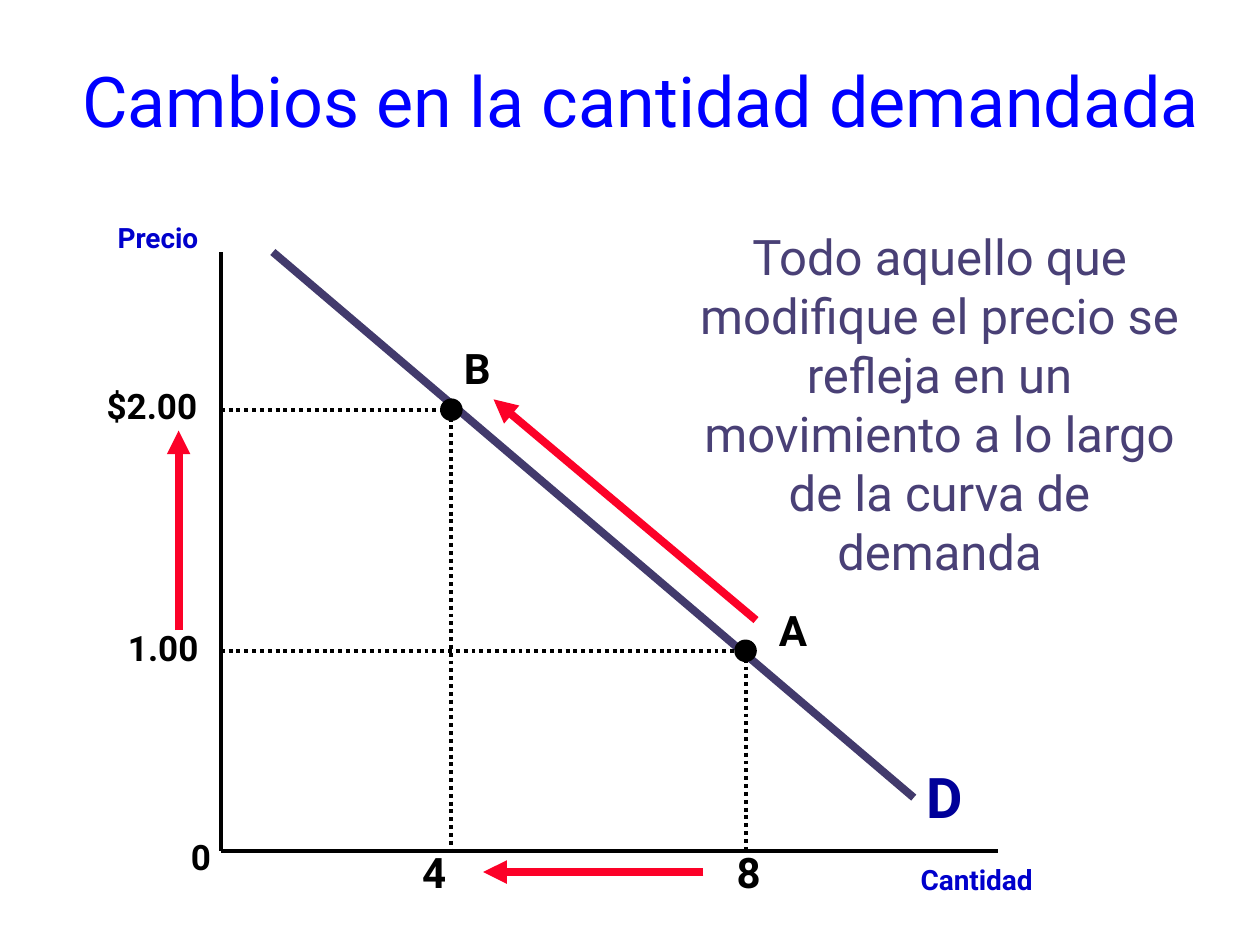
"""Build a slide on movement along a demand curve."""
from lxml import etree
from pptx import Presentation
from pptx.dml.color import RGBColor
from pptx.enum.dml import MSO_LINE
from pptx.enum.shapes import MSO_CONNECTOR, MSO_SHAPE
from pptx.enum.text import MSO_ANCHOR, MSO_AUTO_SIZE, PP_ALIGN
from pptx.oxml.ns import qn
from pptx.util import Cm, Pt

LINE = MSO_CONNECTOR.STRAIGHT
OVAL = MSO_SHAPE.OVAL
DOTS = MSO_LINE.ROUND_DOT
MID = MSO_ANCHOR.MIDDLE
TOP = MSO_ANCHOR.TOP
GROW = MSO_AUTO_SIZE.SHAPE_TO_FIT_TEXT
FIXED = MSO_AUTO_SIZE.NONE
LEFT, CENTER = PP_ALIGN.LEFT, PP_ALIGN.CENTER

FONT = "Roboto"
COLORS = {
    "black": "000000", "white": "FFFFFF", "title": "0000FF", "axis": "0000CC",
    "name": "000099", "curve": "423A6C", "note": "494076", "move": "FC0128",
}
LEFT_X, BASE_Y = 4.45, 17.15
POINTS = {"A": (15.03, 13.12), "B": (9.1, 8.26)}
DOT = 0.42
LABELS = [
    ("0", 3.6, 16.72, 2.1, 1.09, {}),
    ("1.00", 2.33, 12.5, 2.54, 1.09, {}),
    ("$2.00", 1.9, 7.62, 2.54, 1.09, {}),
    ("4", 8.26, 16.93, 1.9, 1.27, {"size": 24}),
    ("8", 14.6, 16.93, 1.9, 1.27, {"size": 24}),
    ("A", 15.45, 12.07, 0.85, 1.27, {"size": 24}),
    ("B", 9.1, 6.77, 1.48, 1.27, {"size": 24}),
    ("D", 18.42, 15.24, 2.12, 1.6, {"size": 32, "color": "name"}),
    ("Precio", 2.12, 4.32, 4.65, 0.93, {"size": 16, "color": "axis"}),
    ("Cantidad", 14.82, 17.27, 9.74, 0.93,
     {"size": 16, "color": "axis", "align": CENTER}),
]
MOVES = [
    ((15.24, 12.5), (9.95, 8.05)),
    ((3.6, 12.7), (3.6, 8.68)),
    ((14.18, 17.58), (9.74, 17.58)),
]


def tint(name):
    """Return the named colour."""
    return RGBColor.from_string(COLORS[name])


def place(shape, x, y, wide, high):
    """Set the place and size of a shape."""
    shape.left, shape.top = Cm(x), Cm(y)
    shape.width, shape.height = Cm(wide), Cm(high)


def write(shape, text, size=20, color="black", bold=True, align=LEFT,
          anchor=TOP, fit=GROW, space=1.0):
    """Put formatted text into a shape."""
    frame = shape.text_frame
    frame.word_wrap = True
    frame.auto_size = fit
    frame.vertical_anchor = anchor
    para = frame.paragraphs[0]
    para.alignment = align
    para.line_spacing = space
    run = para.add_run()
    run.text = text
    run.font.name = FONT
    run.font.size = Pt(size)
    run.font.bold = bold
    run.font.color.rgb = tint(color)


def label(slide, text, x, y, wide, high, **style):
    """Add a text box and return it."""
    box = slide.shapes.add_textbox(Cm(x), Cm(y), Cm(wide), Cm(high))
    write(box, text, **style)
    return box


def draw(slide, start, end, color="black", width=2.25, dash=None, head=False):
    """Draw a straight line, with an arrowhead on request."""
    ends = [Cm(value) for value in (*start, *end)]
    line = slide.shapes.add_connector(LINE, *ends)
    line.line.color.rgb = tint(color)
    line.line.width = Pt(width)
    if dash:
        line.line.dash_style = dash
    if head:
        etree.SubElement(line.line._get_or_add_ln(), qn("a:tailEnd"),
                         type="triangle")
    etree.SubElement(line._element.spPr, qn("a:effectLst"))


def mark(slide, x, y):
    """Draw a round dot centred on a point."""
    dot = slide.shapes.add_shape(OVAL, Cm(x - DOT / 2), Cm(y - DOT / 2),
                                 Cm(DOT), Cm(DOT))
    dot.shadow.inherit = False
    dot.fill.solid()
    dot.fill.fore_color.rgb = tint("black")
    dot.line.color.rgb = tint("black")
    dot.line.width = Pt(1)


def main():
    """Build and save the slide."""
    deck = Presentation()
    deck.slide_width, deck.slide_height = Cm(25.4), Cm(19.05)
    slide = deck.slides.add_slide(deck.slide_layouts[5])
    title = slide.shapes.title
    place(title, 1.27, 0.43, 23.29, 3.38)
    write(title, "Cambios en la cantidad demandada", size=40, color="title",
          bold=False, align=CENTER, anchor=MID, fit=FIXED, space=0.9)

    origin = (LEFT_X, BASE_Y)
    draw(slide, (LEFT_X, 5.08), origin)
    draw(slide, origin, (20.12, BASE_Y))
    draw(slide, (5.5, 5.08), (18.42, 16.08), color="curve", width=4.5)
    note = label(slide, "Todo aquello que modifique el precio se refleja en un "
                 "movimiento a lo largo de la curva de demanda",
                 13.54, 4.45, 10.8, 7.37, size=28, color="note", bold=False,
                 align=CENTER)
    note.fill.solid()
    note.fill.fore_color.rgb = tint("white")

    for x, y in POINTS.values():
        draw(slide, (LEFT_X, y), (x, y), dash=DOTS)
        draw(slide, (x, y), (x, BASE_Y), dash=DOTS)
        mark(slide, x, y)
    for start, end in MOVES:
        draw(slide, start, end, color="move", width=4.5, head=True)
    for text, x, y, wide, high, style in LABELS:
        label(slide, text, x, y, wide, high, **style)
    deck.save("out.pptx")


if __name__ == "__main__":
    main()
